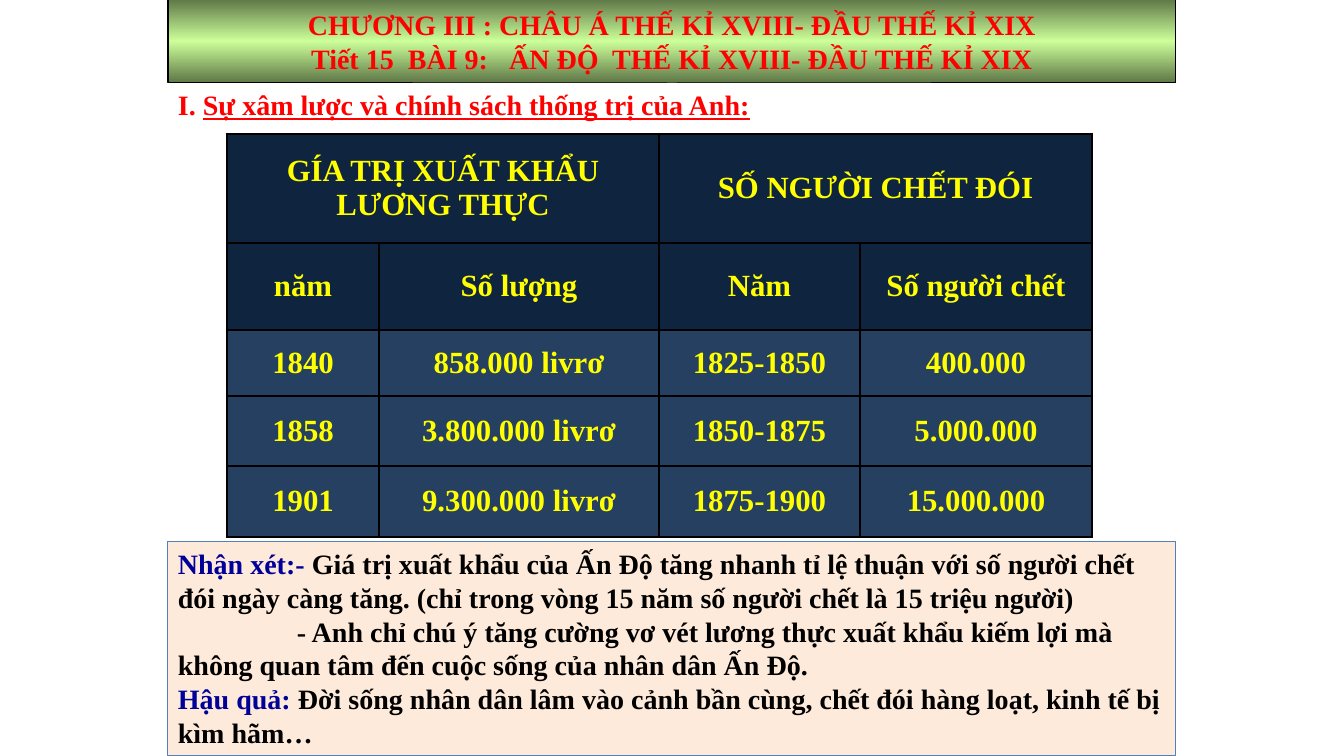
from lxml import etree
from pptx import Presentation
from pptx.dml.color import RGBColor
from pptx.enum.shapes import MSO_SHAPE as SHAPE
from pptx.enum.text import MSO_ANCHOR as ANCHOR, MSO_AUTO_SIZE as AUTO, PP_ALIGN as ALIGN
from pptx.oxml import parse_xml
from pptx.oxml.ns import nsdecls, qn
from pptx.util import Pt

TITLE = ["CHƯƠNG III : CHÂU Á THẾ KỈ XVIII- ĐẦU THẾ KỈ XIX",
         "Tiết 15  BÀI 9:   ẤN ĐỘ  THẾ KỈ XVIII- ĐẦU THẾ KỈ XIX"]
HEADING = ["I. ", "Sự xâm lược và chính sách thống trị của Anh:"]
GROUPS = ["GÍA TRỊ XUẤT KHẨU LƯƠNG THỰC", "SỐ NGƯỜI CHẾT ĐÓI"]
ROWS = [
    ["năm", "Số lượng", "Năm", "Số người chết"],
    ["1840", "858.000 livrơ", "1825-1850", "400.000"],
    ["1858", "3.800.000 livrơ", "1850-1875", "5.000.000"],
    ["1901", "9.300.000 livrơ", "1875-1900", "15.000.000"],
]
NOTES = [
    ("Nhận xét:- ", "Giá trị xuất khẩu của Ấn Độ tăng nhanh tỉ lệ thuận với số người chết "
     "đói ngày càng tăng. (chỉ trong vòng 15 năm số người chết là 15 triệu người)", 0),
    ("", "- Anh chỉ chú ý tăng cường vơ vét lương thực xuất khẩu kiếm lợi mà "
     "không quan tâm đến cuộc sống của nhân dân Ấn Độ.", 119),
    ("Hậu quả: ", "Đời sống nhân dân lâm vào cảnh bần cùng, chết đói hàng loạt, "
     "kinh tế bị kìm hãm…", 0),
]
COLORS = {"red": "FF0000", "yellow": "FFFF00", "navy": "000099", "black": "000000",
          "olive": "5E7647", "lime": "CCFF99", "head": "0F243E", "body": "254061",
          "peach": "FDEADA", "edge": "4F81BD"}
FONT = "Times New Roman"
SLIDE_W, SLIDE_H = 1344, 756
TITLE_BOX = (168, -1, 1008, 84)
HEADING_BOX = (168, 83, 613, 44)
TABLE_AT = (227, 134)
COL_W = [152, 280, 201, 232]
ROW_H = [109, 87, 66, 70, 71]
NOTES_BOX = (168, 542, 1008, 214)


def px(n):
    return round(n * 12192000 / SLIDE_W)


def rgb(name):
    return RGBColor.from_string(COLORS[name])


def style(p, size, color, align=ALIGN.LEFT):
    p.alignment = align
    f = p.font
    f.name, f.size, f.bold = FONT, Pt(size), True
    f.color.rgb = rgb(color)


def outline(sp, color):
    sp.line.color.rgb = rgb(color)
    sp.line.width = Pt(0.75)


def add_title(s):
    sp = s.shapes.title
    sp.left, sp.top, sp.width, sp.height = map(px, TITLE_BOX)
    sp.fill.gradient()
    sp.fill.gradient_angle = 270
    stops = sp._element.spPr.find(qn("a:gradFill")).find(qn("a:gsLst"))
    for stop in list(stops):
        stops.remove(stop)
    for pos, color in ((0, "olive"), (50000, "lime"), (100000, "olive")):
        stop = etree.SubElement(stops, qn("a:gs"), pos=str(pos))
        etree.SubElement(stop, qn("a:srgbClr"), val=COLORS[color])
    outline(sp, "black")
    tf = sp.text_frame
    tf.text = "\n".join(TITLE)
    tf.auto_size, tf.word_wrap, tf.vertical_anchor = AUTO.NONE, False, ANCHOR.MIDDLE
    for p in tf.paragraphs:
        style(p, 20, "red", ALIGN.CENTER)


def add_heading(s):
    tf = s.shapes.add_textbox(*map(px, HEADING_BOX)).text_frame
    tf.word_wrap = True
    p = tf.paragraphs[0]
    style(p, 20, "red")
    for text, underline in zip(HEADING, (False, True)):
        r = p.add_run()
        r.text = text
        r.font.underline = underline


def set_borders(cell, row, col):
    outer = {"L": col == 0, "R": col == len(COL_W) - 1,
             "T": row == 0, "B": row == len(ROW_H) - 1}
    tcPr = cell._tc.get_or_add_tcPr()
    for i, (side, thick) in enumerate(outer.items()):
        tcPr.insert(i, parse_xml(
            f'<a:ln{side} {nsdecls("a")} w="{Pt(2.25 if thick else 1)}"><a:solidFill>'
            f'<a:srgbClr val="{COLORS["black"]}"/></a:solidFill></a:ln{side}>'))


def add_data_table(s):
    grid = [[GROUPS[0], "", GROUPS[1], ""]] + ROWS
    size = (sum(COL_W), sum(ROW_H))
    table = s.shapes.add_table(len(ROW_H), len(COL_W), *map(px, TABLE_AT + size)).table
    for col, w in zip(table.columns, COL_W):
        col.width = px(w)
    for row, h in zip(table.rows, ROW_H):
        row.height = px(h)
    for i, texts in enumerate(grid):
        for j, text in enumerate(texts):
            cell = table.cell(i, j)
            cell.text = text
            cell.vertical_anchor = ANCHOR.MIDDLE
            cell.fill.solid()
            cell.fill.fore_color.rgb = rgb("head" if i < 2 else "body")
            p = cell.text_frame.paragraphs[0]
            style(p, 22, "yellow", ALIGN.CENTER)
            p.space_before = Pt(4.4)
            set_borders(cell, i, j)
    for j in (0, 2):
        table.cell(0, j).merge(table.cell(0, j + 1))


def add_notes_panel(s):
    sp = s.shapes.add_shape(SHAPE.RECTANGLE, *map(px, NOTES_BOX))
    sp.shadow.inherit = False
    sp.fill.solid()
    sp.fill.fore_color.rgb = rgb("peach")
    outline(sp, "edge")
    tf = sp.text_frame
    tf.word_wrap, tf.vertical_anchor = True, ANCHOR.TOP
    for i, (label, text, indent) in enumerate(NOTES):
        p = tf.add_paragraph() if i else tf.paragraphs[0]
        style(p, 20, "black")
        p._p.get_or_add_pPr().set("indent", str(px(indent)))
        for part, color in ((label, "navy"), (text, "black")):
            if part:
                r = p.add_run()
                r.text = part
                r.font.color.rgb = rgb(color)


def main():
    prs = Presentation()
    prs.slide_width, prs.slide_height = px(SLIDE_W), px(SLIDE_H)
    s = prs.slides.add_slide(prs.slide_layouts[5])
    add_title(s)
    add_heading(s)
    add_data_table(s)
    add_notes_panel(s)
    prs.save("out.pptx")


if __name__ == "__main__":
    main()
